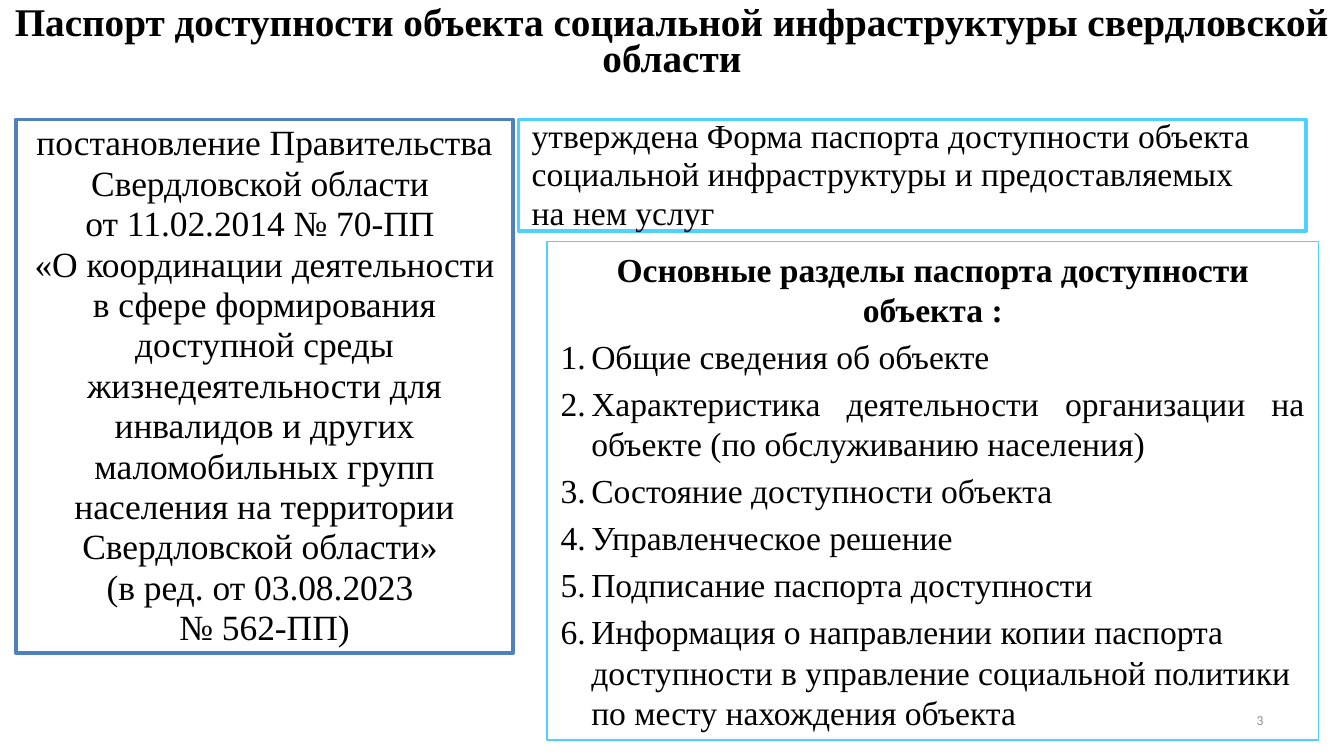
import pptx
import pptx.util
import pptx.dml.color
import pptx.enum.shapes
import pptx.enum.text
import pptx.oxml.ns
import lxml.etree

Cm, Pt = pptx.util.Cm, pptx.util.Pt
ALIGN = pptx.enum.text.PP_ALIGN
ANCHOR = pptx.enum.text.MSO_ANCHOR

BLACK = pptx.dml.color.RGBColor(0x00, 0x00, 0x00)
WHITE = pptx.dml.color.RGBColor(0xFF, 0xFF, 0xFF)
GREY = pptx.dml.color.RGBColor(0x8C, 0x8C, 0x8C)
BLUE = pptx.dml.color.RGBColor(0x4F, 0x81, 0xBD)
SKY = pptx.dml.color.RGBColor(0x4F, 0xD1, 0xFF)
SERIF = "Times New Roman"

TITLE = "Паспорт доступности объекта социальной инфраструктуры свердловской области"
DECREE = [
    "постановление Правительства Свердловской области \vот 11.02.2014 № 70-ПП \v"
    "«О координации деятельности в сфере формирования доступной среды "
    "жизнедеятельности для инвалидов и других маломобильных групп населения "
    "на территории Свердловской области» \v(в ред. от 03.08.2023 ",
    "№ 562-ПП)",
]
FORM = [
    "утверждена Форма паспорта доступности объекта социальной инфраструктуры "
    "и предоставляемых \vна нем услуг",
]
HEADING = "Основные разделы паспорта доступности объекта :"
SECTIONS = [
    ("Общие сведения об объекте", ALIGN.LEFT),
    ("Характеристика деятельности организации на объекте "
     "(по обслуживанию населения)", ALIGN.JUSTIFY),
    ("Состояние доступности объекта", ALIGN.LEFT),
    ("Управленческое решение", ALIGN.LEFT),
    ("Подписание паспорта доступности", ALIGN.LEFT),
    ("Информация о направлении копии паспорта доступности в управление "
     "социальной политики по месту нахождения объекта", ALIGN.LEFT),
]
PAGE = "3"

BOXES = [
    (DECREE, (0.3, 2.26, 9.4, 10.08), BLUE, 19, ALIGN.CENTER),
    (FORM, (9.8, 2.26, 14.88, 2.11), SKY, 18, ALIGN.LEFT),
]


def apply(obj, **values):
    for name, value in values.items():
        setattr(obj, name, value)


def place(sp, box):
    apply(sp, **dict(zip(("left", "top", "width", "height"), map(Cm, box))))


def outline(sp, color, width):
    sp.line.color.rgb = color
    sp.line.width = Pt(width)


def frame(sp, **values):
    tf = sp.text_frame
    apply(tf, word_wrap=True, auto_size=pptx.enum.text.MSO_AUTO_SIZE.NONE, **values)
    return tf


def write(tf, i, text, size, align, bold=False, color=BLACK, font=SERIF, **spacing):
    p = tf.paragraphs[0] if i == 0 else tf.add_paragraph()
    p.text = text
    apply(p, alignment=align, **spacing)
    for r in p.runs:
        apply(r.font, size=Pt(size), bold=bold, name=font)
        r.font.color.rgb = color
    return p


def bullet(p, indent, tag, **attrs):
    pPr = p._p.get_or_add_pPr()
    pPr.set("marL", str(Cm(indent)))
    pPr.set("indent", str(-Cm(indent)))
    lxml.etree.SubElement(pPr, pptx.oxml.ns.qn(tag), **attrs)


prs = pptx.Presentation()
prs.slide_width, prs.slide_height = Cm(25.4), Cm(14.29)
s = prs.slides.add_slide(prs.slide_layouts[1])

title = s.shapes.title
place(title, (0, 0.15, 25.4, 1.4))
tf = frame(title, vertical_anchor=ANCHOR.TOP, margin_left=0, margin_right=0,
           margin_top=0, margin_bottom=0)
write(tf, 0, TITLE, 21, ALIGN.CENTER, bold=True, line_spacing=0.76)

for texts, box, color, size, align in BOXES:
    sp = s.shapes.add_shape(pptx.enum.shapes.MSO_SHAPE.FLOWCHART_PROCESS,
                            *map(Cm, box))
    sp.shadow.inherit = False
    sp.fill.solid()
    sp.fill.fore_color.rgb = WHITE
    outline(sp, color, 2)
    tf = frame(sp, vertical_anchor=ANCHOR.MIDDLE)
    for i, text in enumerate(texts):
        write(tf, i, text, size, align, line_spacing=0.95)

body = s.placeholders[1]
place(body, (10.34, 4.57, 14.58, 9.42))
outline(body, SKY, 0.75)
tf = frame(body, vertical_anchor=ANCHOR.TOP)
p = write(tf, 0, HEADING, 18, ALIGN.CENTER, bold=True, space_before=Pt(3.6))
bullet(p, 0, "a:buNone")
for i, (text, align) in enumerate(SECTIONS, 1):
    p = write(tf, i, text, 18, align, space_before=Pt(3.6))
    bullet(p, 0.58, "a:buAutoNum", type="arabicPeriod")

number = s.shapes.add_textbox(*map(Cm, (18.21, 13.23, 5.92, 0.76)))
tf = frame(number, vertical_anchor=ANCHOR.MIDDLE)
write(tf, 0, PAGE, 7.3, ALIGN.RIGHT, color=GREY, font="Calibri")

prs.save("out.pptx")
